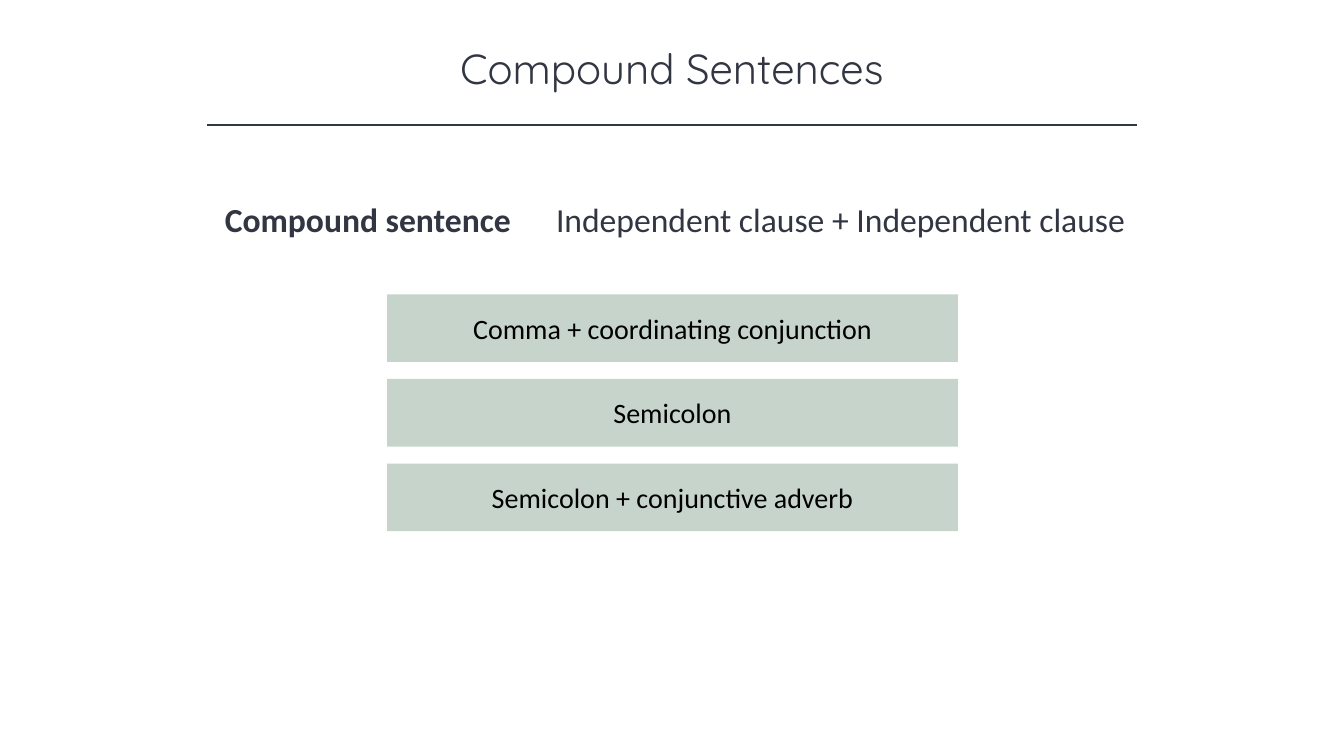
from pptx import Presentation
from pptx.dml.color import RGBColor
from pptx.enum.shapes import MSO_CONNECTOR, MSO_SHAPE
from pptx.enum.text import MSO_ANCHOR, MSO_AUTO_SIZE, PP_ALIGN
from pptx.oxml.ns import qn
from pptx.util import Inches, Pt
from lxml.etree import SubElement

INK = RGBColor(0x32, 0x35, 0x42)
BLACK = RGBColor(0, 0, 0)
SAGE = RGBColor(0xC7, 0xD4, 0xCB)
WIDE, HIGH = 13.33, 7.5
LINKS = ["Comma + coordinating conjunction", "Semicolon",
         "Semicolon + conjunctive adverb"]


def place(box):
    return [Inches(size) for size in box]


def write(shape, text, size, color=INK, align=PP_ALIGN.CENTER, face="Calibri", bold=False):
    frame = shape.text_frame
    frame.text = text
    frame.word_wrap = True
    frame.auto_size = MSO_AUTO_SIZE.NONE
    frame.vertical_anchor = MSO_ANCHOR.MIDDLE
    line = frame.paragraphs[0]
    line.alignment = align
    font = line.runs[0].font
    font.name, font.size, font.bold = face, Pt(size), bold
    font.color.rgb = color


def add_head(slide, box):
    left, top, width, height = box
    title = slide.shapes.title
    title.left, title.top, title.width, title.height = place(
        (left, top, width, height * 0.7))
    write(title, "Compound Sentences", 30, face="Quicksand")
    inset = width * 0.039
    base = top + height
    rule = slide.shapes.add_connector(
        MSO_CONNECTOR.STRAIGHT,
        *place((left + inset, base, left + width - inset, base)))
    rule.line.color.rgb = INK
    rule.line.width = Pt(1)
    SubElement(rule._element.spPr, qn("a:effectLst"))


def add_rule(slide, box):
    left, top, width, height = box
    term = width / 3
    gap = 0.25
    start = left + term + gap
    name = slide.shapes.add_textbox(*place((left, top, term, height)))
    write(name, "Compound sentence", 24, align=PP_ALIGN.RIGHT, bold=True)
    form = slide.shapes.add_textbox(
        *place((start, top, width - term - gap, height)))
    write(form, "Independent clause + Independent clause", 24,
          align=PP_ALIGN.LEFT)


def add_links(slide, box):
    left, top, width, height = box
    step = height / (len(LINKS) - 0.2)
    for row, text in enumerate(LINKS):
        bar = slide.shapes.add_shape(
            MSO_SHAPE.RECTANGLE,
            *place((left, top + row * step, width, step * 0.8)))
        bar.shadow.inherit = False
        bar.fill.solid()
        bar.fill.fore_color.rgb = SAGE
        bar.line.fill.background()
        write(bar, text, 20, BLACK)


def main():
    deck = Presentation()
    deck.slide_width, deck.slide_height = Inches(WIDE), Inches(HIGH)
    slide = deck.slides.add_slide(deck.slide_layouts[5])
    add_head(slide, (WIDE / 8, 0.37, WIDE * 0.75, 0.87))
    add_rule(slide, (2, 1.92, 9.5, 0.5))
    add_links(slide, (3.84, 2.92, 5.66, 2.35))
    deck.save("out.pptx")


if __name__ == "__main__":
    main()
